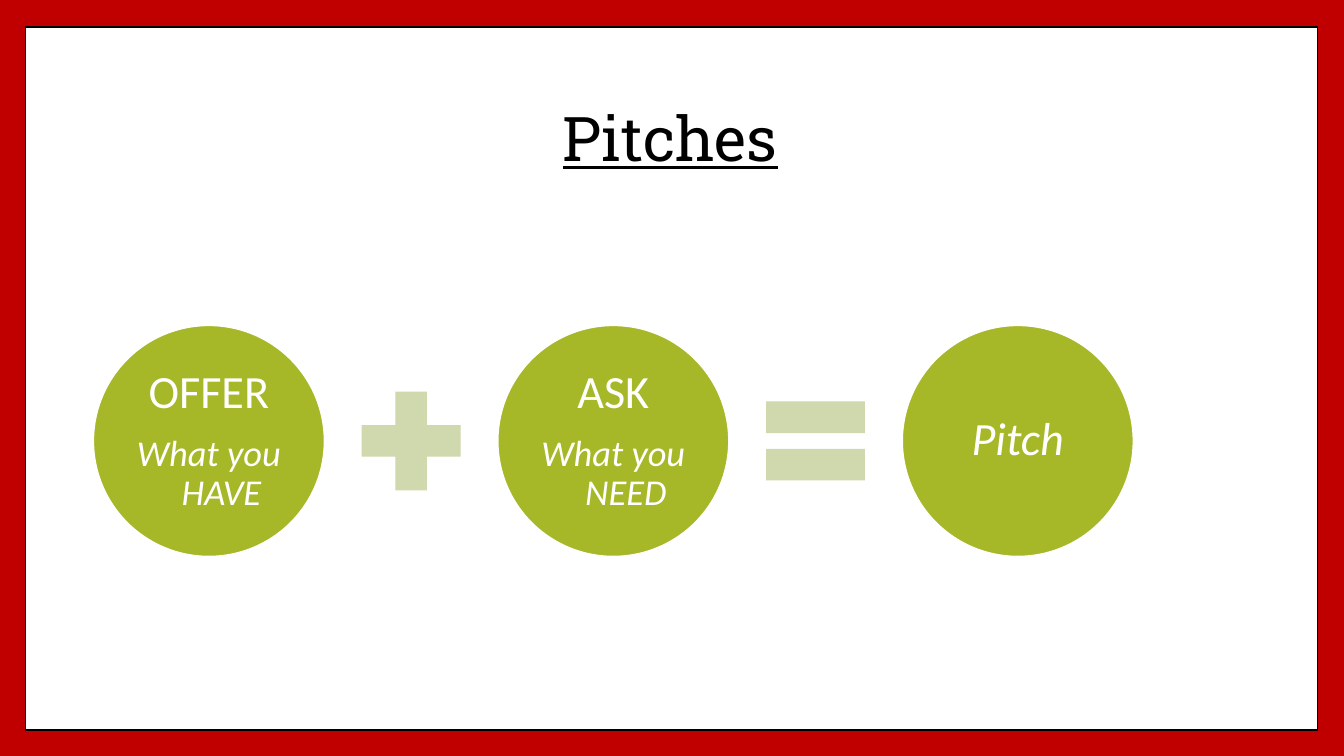
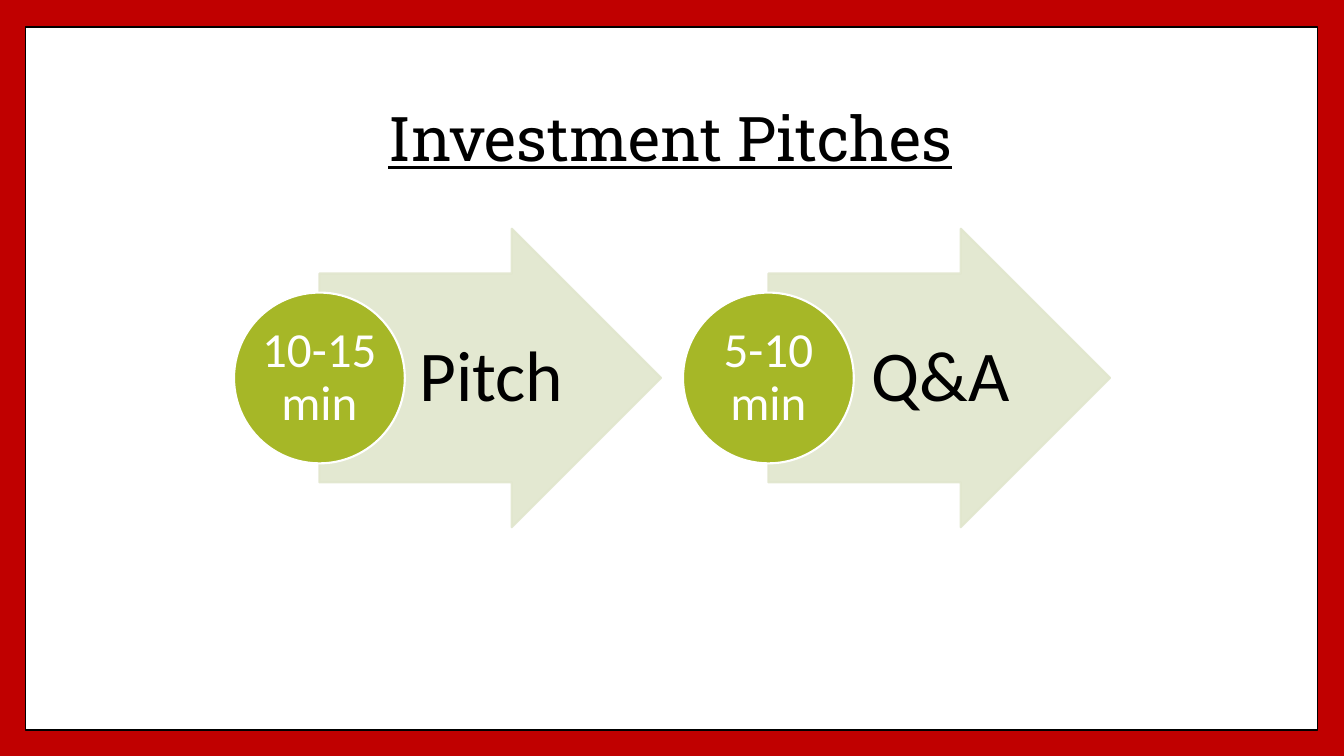
"""Builds two slides on pitches: an offer and ask equation, and a timed sequence."""
from math import sqrt

from lxml.etree import SubElement
from pptx import Presentation
from pptx.dml.color import RGBColor
from pptx.enum.shapes import MSO_SHAPE
from pptx.enum.text import MSO_ANCHOR, PP_ALIGN
from pptx.oxml.ns import qn
from pptx.util import Pt

COLOURS = {
    "border": "C00000",
    "paper": "FFFFFF",
    "ink": "000000",
    "circle": "A6B727",
    "operator": "D0D8AD",
    "arrow": "E1E6CD",
}
TITLE_FONT = "Roboto Slab"
BODY_FONT = "Calibri"

EQUATION_TITLE = "Pitches"
EQUATION_TERMS = [
    [("OFFER", 33, False), ("What you HAVE", 26, True)],
    [("ASK", 33, False), ("What you NEED", 26, True)],
    [("Pitch", 33, True)],
]
OPERATORS = [MSO_SHAPE.MATH_PLUS, MSO_SHAPE.MATH_EQUAL]

TIMELINE_TITLE = "Investment Pitches"
STAGES = [("Pitch", "10-15 min"), ("Q&A", "5-10 min")]


def colour(name):
    return RGBColor.from_string(COLOURS[name])


def add_shape(page, kind, left, top, width, height, fill, line=None, weight=1.5):
    shape = page.shapes.add_shape(kind, Pt(left), Pt(top), Pt(width), Pt(height))
    shape.shadow.inherit = False
    shape.fill.solid()
    shape.fill.fore_color.rgb = colour(fill)
    if line:
        shape.line.color.rgb = colour(line)
        shape.line.width = Pt(weight)
    else:
        shape.line.fill.background()
    return shape


def set_opacity(shape, percent):
    for node in shape.element.spPr.iter(qn("a:srgbClr")):
        SubElement(node, qn("a:alpha")).set("val", str(percent * 1000))


def write(shape, lines, ink, insets):
    """Write (text, size, italic) lines; lines after the first hang by 18 points."""
    frame = shape.text_frame
    frame.word_wrap = True
    frame.vertical_anchor = MSO_ANCHOR.MIDDLE
    frame.margin_left, frame.margin_top, frame.margin_right, frame.margin_bottom = map(Pt, insets)
    for index, (text, size, italic) in enumerate(lines):
        para = frame.add_paragraph() if index else frame.paragraphs[0]
        para.alignment = PP_ALIGN.CENTER
        para.line_spacing = 0.9
        if index < len(lines) - 1:
            para.space_after = Pt(0.35 * size)
        if index:
            properties = para._p.get_or_add_pPr()
            properties.set("marL", str(Pt(18)))
            properties.set("indent", str(-Pt(18)))
        span = para.add_run()
        span.text = text
        span.font.name = BODY_FONT
        span.font.size = Pt(size)
        span.font.italic = italic
        span.font.color.rgb = colour(ink)


def add_circle(page, left, top, size, lines, inset):
    circle = add_shape(page, MSO_SHAPE.OVAL, left, top, size, size, "circle", "paper")
    write(circle, lines, "paper", [inset] * 4)


def add_page(deck, layout, title):
    page = deck.slides.add_slide(layout)
    box = page.shapes.title
    box.left, box.top, box.width, box.height = Pt(90), Pt(48), Pt(777.6), Pt(106.6)
    box.text_frame.vertical_anchor = MSO_ANCHOR.MIDDLE
    para = box.text_frame.paragraphs[0]
    para.alignment = PP_ALIGN.CENTER
    para.line_spacing = 0.9
    span = para.add_run()
    span.text = title
    span.font.name = TITLE_FONT
    span.font.size = Pt(44)
    span.font.underline = True
    span.font.color.rgb = colour("ink")
    return page


def draw_equation(page):
    start, middle, diameter, gap = 66.5, 315, 165.5, 13.7
    operator_size = diameter * 0.58
    step = diameter + operator_size + 2 * gap
    for index, lines in enumerate(EQUATION_TERMS):
        left = start + index * step
        add_circle(page, left, middle - diameter / 2, diameter, lines, 3.6)
        if index < len(OPERATORS):
            add_shape(page, OPERATORS[index], left + diameter + gap, middle - operator_size / 2,
                      operator_size, operator_size, "operator")


def draw_timeline(page):
    start, middle, step = 228.2, 270, 320.7
    width, height, diameter, shaft = 244, 213.2, 122, 0.7
    for index, (name, duration) in enumerate(STAGES):
        left = start + index * step
        arrow = add_shape(page, MSO_SHAPE.RIGHT_ARROW, left, middle - height / 2,
                          width, height, "arrow", "arrow")
        arrow.adjustments[0], arrow.adjustments[1] = shaft, 0.5
        set_opacity(arrow, 90)
        label = page.shapes.add_textbox(Pt(left + diameter / 2), Pt(middle - shaft * height / 2),
                                        Pt(119), Pt(shaft * height))
        write(label, [(name, 51, False)], "ink", (10, 3, 5, 3))
        add_circle(page, left - diameter / 2, middle - diameter / 2, diameter,
                   [(duration, 35, False)], 1.5)


def main():
    deck = Presentation()
    deck.slide_width, deck.slide_height = Pt(960), Pt(540)
    backdrop = deck.slide_master.background.fill
    backdrop.solid()
    backdrop.fore_color.rgb = colour("border")
    layout = deck.slide_layouts[5]

    equation = add_page(deck, layout, EQUATION_TITLE)
    panel = add_shape(equation, MSO_SHAPE.RECTANGLE, 18.2, 19.4, 923, 502, "paper", "ink", 1)
    layout.shapes.element.insert(2, panel.element)
    draw_equation(equation)

    timeline = add_page(deck, layout, TIMELINE_TITLE)
    draw_timeline(timeline)
    deck.save("out.pptx")


if __name__ == "__main__":
    main()
